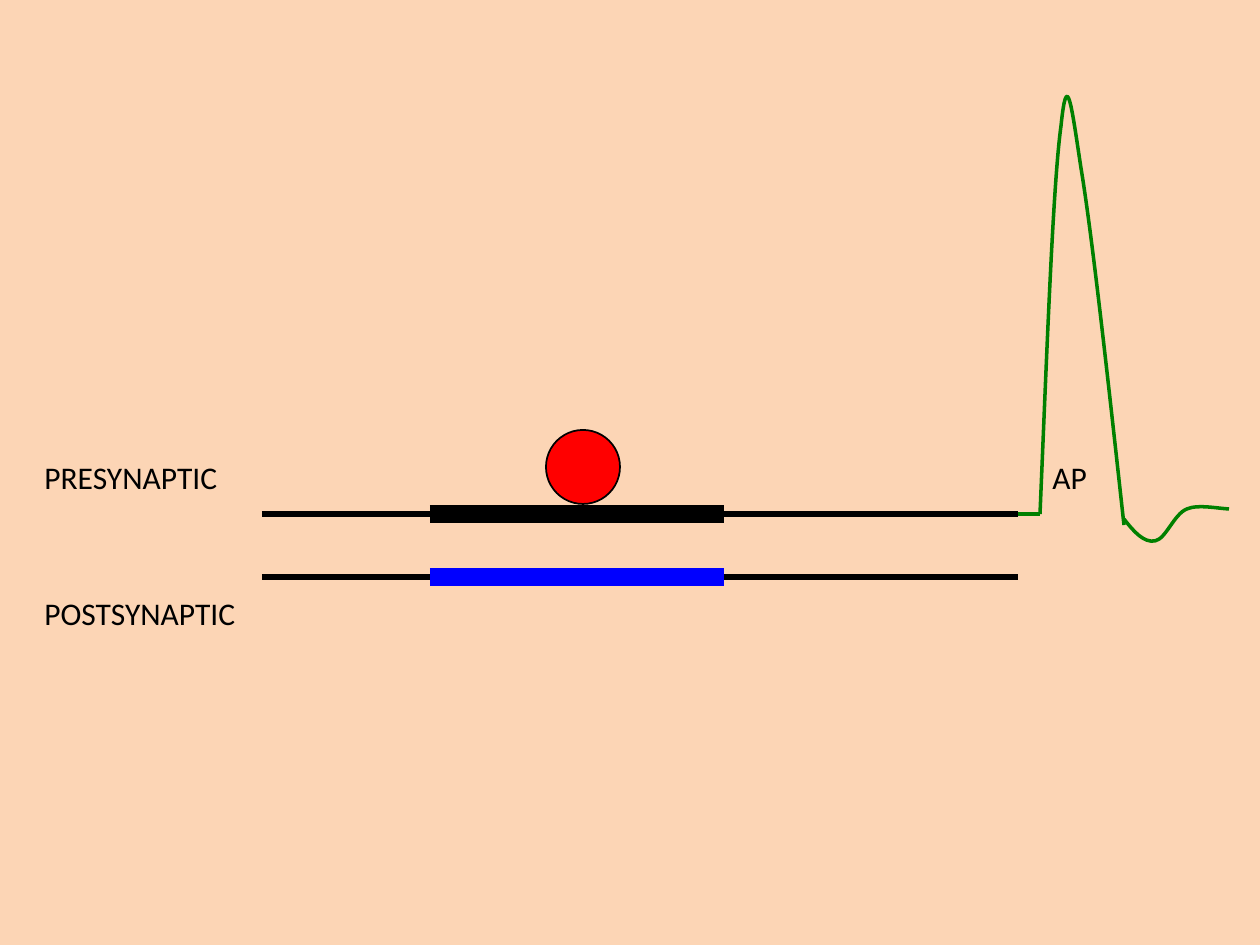
"""Draw a synapse diagram with an action potential trace."""
from dataclasses import dataclass

from lxml import etree
from pptx import Presentation
from pptx.dml.color import RGBColor
from pptx.enum.shapes import MSO_CONNECTOR, MSO_SHAPE
from pptx.enum.text import MSO_AUTO_SIZE
from pptx.oxml.ns import qn
from pptx.util import Inches, Pt

STRAIGHT = MSO_CONNECTOR.STRAIGHT
OVAL = MSO_SHAPE.OVAL
FIT_SHAPE = MSO_AUTO_SIZE.SHAPE_TO_FIT_TEXT
EMU_PER_PX = Inches(1) / 126


@dataclass(frozen=True)
class Theme:
    background: str = "FCD5B5"
    ink: str = "000000"
    receptor: str = "0000FF"
    vesicle: str = "FF0000"
    trace: str = "008000"
    font: str = "Calibri"
    label_size: int = 18
    membrane_width: int = 3
    zone_width: int = 10
    outline_width: int = 1
    trace_width: int = 2


@dataclass(frozen=True)
class Segment:
    left: int
    right: int
    y: int
    color: str
    width: int


@dataclass(frozen=True)
class Label:
    text: str
    left: int
    top: int
    width: int


@dataclass(frozen=True)
class Curve:
    start: tuple[int, int]
    controls: list[tuple[int, int]]


THEME = Theme()
PRE_Y, POST_Y = 514, 577
AXON_LEFT, AXON_RIGHT = 262, 1018
ZONE_LEFT, ZONE_RIGHT = 430, 724
SPIKE_LEFT = 1040
LABEL_HEIGHT = 50

MEMBRANES = [Segment(AXON_LEFT, AXON_RIGHT, y, THEME.ink, THEME.membrane_width)
             for y in (PRE_Y, POST_Y)]
ZONES = [Segment(ZONE_LEFT, ZONE_RIGHT, y, color, THEME.zone_width)
         for y, color in ((POST_Y, THEME.receptor), (PRE_Y, THEME.ink))]
BASELINE = Segment(AXON_RIGHT, SPIKE_LEFT, PRE_Y, THEME.trace, THEME.trace_width)
LABELS = [
    Label("POSTSYNAPTIC", 32, 588, 268),
    Label("PRESYNAPTIC", 32, 452, 248),
    Label("AP", SPIKE_LEFT, 452, 67),
]
CURVES = [
    Curve((SPIKE_LEFT, PRE_Y), [
        (1047, 349), (1053, 184), (1061, 126),
        (1067, 68), (1071, 102), (1081, 168),
        (1092, 234), (1108, 379), (1124, 525)]),
    Curve((1124, 519), [
        (1134, 532), (1144, 543), (1155, 541),
        (1166, 539), (1174, 514), (1187, 509),
        (1198, 504), (1221, 509), (1229, 509)]),
]


def px(length: int) -> int:
    """Turn px into EMU."""
    return round(length * EMU_PER_PX)


def rgb(color: str) -> RGBColor:
    """Turn a hex string into a colour."""
    return RGBColor.from_string(color)


def style_line(line, color: str, width: int) -> None:
    """Set the colour and width of a line."""
    line.color.rgb = rgb(color)
    line.width = Pt(width)


def draw_segment(shapes, segment: Segment) -> None:
    """Draw a horizontal line without a shadow."""
    connector = shapes.add_connector(STRAIGHT, px(segment.left), px(segment.y),
                                     px(segment.right), px(segment.y))
    style_line(connector.line, segment.color, segment.width)
    etree.SubElement(connector._element.spPr, qn("a:effectLst"))


def draw_vesicle(shapes, left: int, top: int, size: int) -> None:
    """Draw the round vesicle."""
    vesicle = shapes.add_shape(OVAL, px(left), px(top), px(size), px(size))
    vesicle.shadow.inherit = False
    vesicle.fill.solid()
    vesicle.fill.fore_color.rgb = rgb(THEME.vesicle)
    style_line(vesicle.line, THEME.ink, THEME.outline_width)


def draw_label(shapes, label: Label) -> None:
    """Draw a one-line label."""
    frame = shapes.add_textbox(px(label.left), px(label.top),
                               px(label.width), px(LABEL_HEIGHT)).text_frame
    frame.text = label.text
    frame.word_wrap = False
    frame.auto_size = FIT_SHAPE
    font = frame.paragraphs[0].runs[0].font
    font.name = THEME.font
    font.size = Pt(THEME.label_size)
    font.color.rgb = rgb(THEME.ink)


def draw_curve(shapes, curve: Curve) -> None:
    """Draw a trace whose points are grouped in threes as cubic Béziers."""
    builder = shapes.build_freeform(*curve.start, scale=EMU_PER_PX)
    builder.add_line_segments(curve.controls, close=False)
    trace = builder.convert_to_shape()
    trace.shadow.inherit = False
    trace.fill.background()
    style_line(trace.line, THEME.trace, THEME.trace_width)
    outline = next(trace._element.iter(qn("a:path")))
    steps = outline.findall(qn("a:lnTo"))
    for first in range(0, len(steps), 3):
        bezier = etree.SubElement(outline, qn("a:cubicBezTo"))
        for step in steps[first:first + 3]:
            bezier.append(step[0])
            outline.remove(step)


def main() -> None:
    """Build and save the slide."""
    deck = Presentation()
    deck.slide_width, deck.slide_height = px(1260), px(945)
    slide = deck.slides.add_slide(deck.slide_layouts[6])
    slide.background.fill.solid()
    slide.background.fill.fore_color.rgb = rgb(THEME.background)
    shapes = slide.shapes
    for segment in MEMBRANES + ZONES:
        draw_segment(shapes, segment)
    draw_vesicle(shapes, 546, 430, 74)
    for curve in CURVES:
        draw_curve(shapes, curve)
    draw_segment(shapes, BASELINE)
    for label in LABELS:
        draw_label(shapes, label)
    deck.save("out.pptx")


if __name__ == "__main__":
    main()
